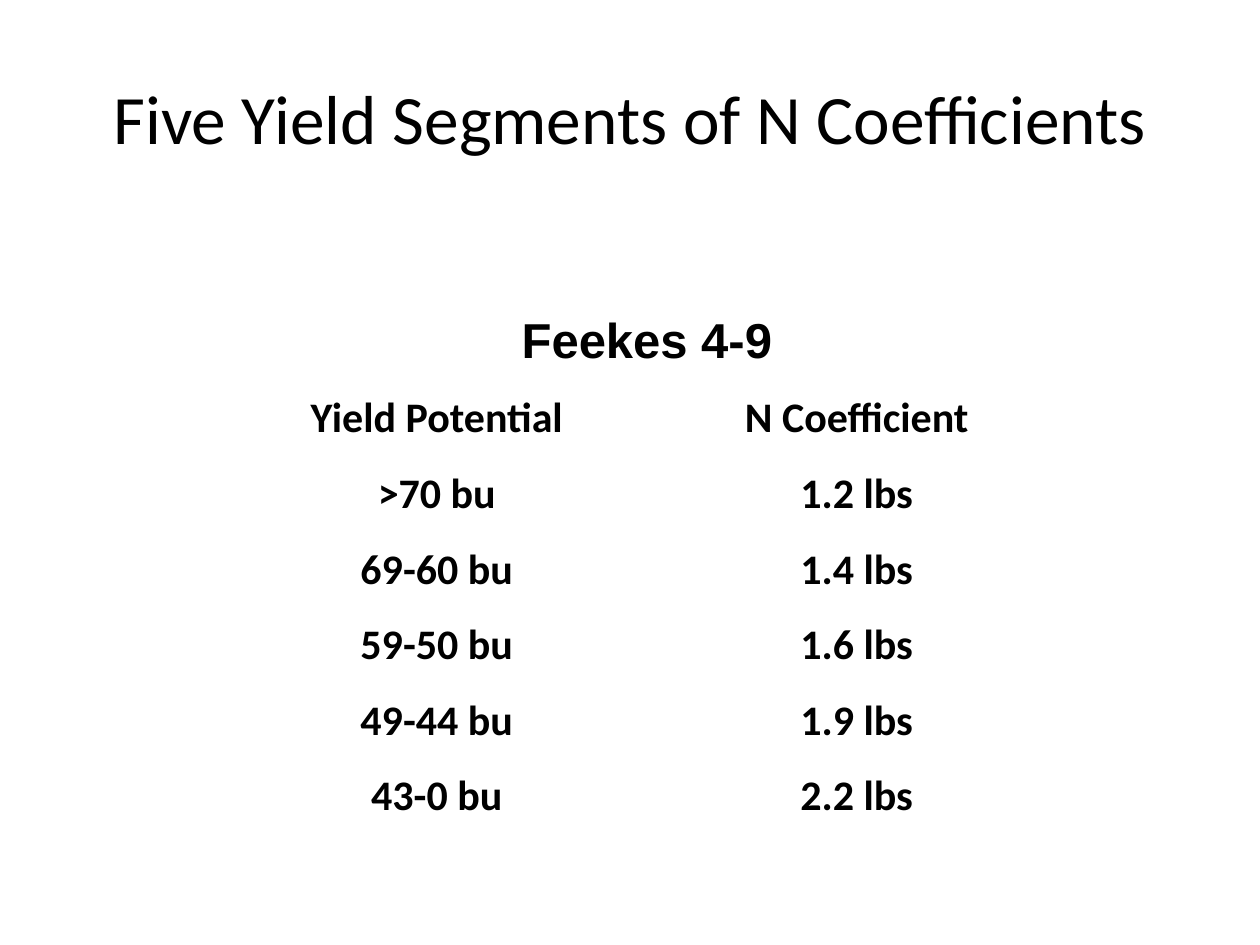
from dataclasses import dataclass

from pptx import Presentation
from pptx.dml.color import RGBColor
from pptx.enum.text import MSO_ANCHOR, PP_ALIGN
from pptx.util import Inches, Pt


@dataclass(frozen=True)
class Theme:
    ink: RGBColor = RGBColor(0, 0, 0)
    body_font: str = "Calibri"
    heading_font: str = "Arial"
    title_size: float = 39.6
    heading_size: float = 28
    body_size: float = 24


class SlideBuilder:
    """Draws styled elements on one slide, with lengths as shares of its size."""

    def __init__(self, presentation, theme):
        self.theme = theme
        self.width = presentation.slide_width
        self.height = presentation.slide_height
        self.slide = presentation.slides.add_slide(presentation.slide_layouts[6])

    def across(self, share):
        return round(self.width * share)

    def down(self, share):
        return round(self.height * share)

    def centred_text(self, text_frame, text, font_name, size, bold=False):
        text_frame.text = text
        paragraph = text_frame.paragraphs[0]
        paragraph.alignment = PP_ALIGN.CENTER
        font = paragraph.runs[0].font
        font.name, font.size, font.bold = font_name, Pt(size), bold
        font.color.rgb = self.theme.ink

    def title(self, text, left, top, width, height):
        box = self.slide.shapes.add_textbox(
            self.across(left), self.down(top), self.across(width), self.down(height)
        )
        box.text_frame.word_wrap = True
        box.text_frame.vertical_anchor = MSO_ANCHOR.MIDDLE
        self.centred_text(box.text_frame, text, self.theme.body_font,
                          self.theme.title_size)

    def cell(self, cell, text, font_name, size):
        cell.fill.background()
        cell.vertical_anchor = MSO_ANCHOR.BOTTOM
        cell.margin_left = cell.margin_right = cell.margin_top = Inches(0.01)
        cell.margin_bottom = 0
        self.centred_text(cell.text_frame, text, font_name, size, bold=True)

    def table(self, heading, rows, left, top, width, heading_height, row_height):
        theme = self.theme
        columns = len(rows[0])
        table = self.slide.shapes.add_table(
            len(rows) + 1, columns,
            self.across(left), self.down(top), self.across(width),
            self.down(heading_height + row_height * len(rows)),
        ).table
        table.first_row = table.horz_banding = False
        for row in table.rows:
            row.height = self.down(row_height)
        table.rows[0].height = self.down(heading_height)
        table.cell(0, 0).merge(table.cell(0, columns - 1))
        for heading_cell in table.rows[0].cells:
            heading_cell.fill.background()
        self.cell(table.cell(0, 0), heading, theme.heading_font, theme.heading_size)
        for row_index, values in enumerate(rows, start=1):
            for column_index, value in enumerate(values):
                self.cell(table.cell(row_index, column_index), value,
                          theme.body_font, theme.body_size)


def main():
    presentation = Presentation()
    presentation.slide_width, presentation.slide_height = Inches(10), Inches(7.5)
    builder = SlideBuilder(presentation, Theme())
    coefficients = [
        ("Yield Potential", "N Coefficient"),
        (">70 bu", "1.2 lbs"),
        ("69-60 bu", "1.4 lbs"),
        ("59-50 bu", "1.6 lbs"),
        ("49-44 bu", "1.9 lbs"),
        ("43-0 bu", "2.2 lbs"),
    ]
    builder.table("Feekes 4-9", coefficients, left=0.18, top=0.29, width=2 / 3,
                  heading_height=0.1, row_height=0.08)
    builder.title("Five Yield Segments of N Coefficients",
                  left=0.05, top=0.04, width=0.9, height=1 / 6)
    presentation.save("out.pptx")


if __name__ == "__main__":
    main()
